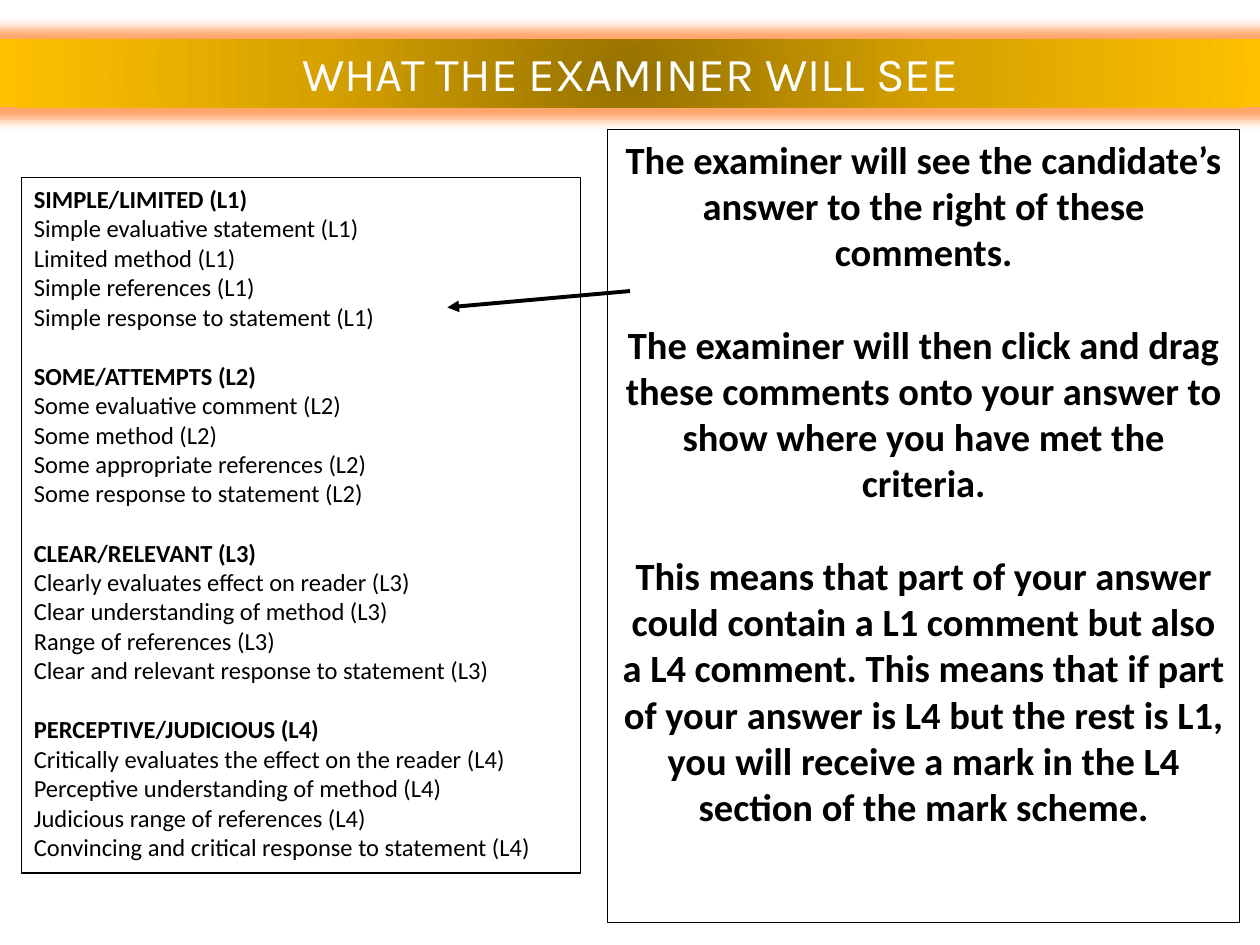
from lxml import etree
from pptx import Presentation
from pptx import util as u
from pptx.dml.color import RGBColor
from pptx.enum import shapes, text
from pptx.oxml import parse_xml
from pptx.oxml.ns import nsdecls, qn

BLACK, WHITE, GLOW = "000000", "FFFFFF", "FF6600"
BAR_STOPS = [(0, "977200"), (50, "D7A200"), (100, "FFC000")]

LEVELS = {
    "SIMPLE/LIMITED (L1)": [
        "Simple evaluative statement (L1)",
        "Limited method (L1)",
        "Simple references (L1)",
        "Simple response to statement (L1)",
    ],
    "SOME/ATTEMPTS (L2)": [
        "Some evaluative comment (L2)",
        "Some method (L2)",
        "Some appropriate references (L2)",
        "Some response to statement (L2)",
    ],
    "CLEAR/RELEVANT (L3)": [
        "Clearly evaluates effect on reader (L3)",
        "Clear understanding of method (L3)",
        "Range of references (L3)",
        "Clear and relevant response to statement (L3)",
    ],
    "PERCEPTIVE/JUDICIOUS (L4)": [
        "Critically evaluates the effect on the reader (L4)",
        "Perceptive understanding of method (L4)",
        "Judicious range of references (L4)",
        "Convincing and critical response to statement (L4)",
    ],
}
EXPLANATION = [
    "The examiner will see the candidate’s answer to the right of these comments.",
    "The examiner will then click and drag these comments onto your answer to "
    "show where you have met the criteria.",
    "This means that part of your answer could contain a L1 comment but also "
    "a L4 comment. This means that if part of your answer is L4 but the rest "
    "is L1, you will receive a mark in the L4 section of the mark scheme.",
]


def color(value):
    return RGBColor.from_string(value)


def write(paragraph, content, size, font="Calibri", fill=BLACK, bold=False,
          align=text.PP_ALIGN.LEFT, before=0):
    paragraph.alignment = align
    paragraph.space_before = u.Pt(before)
    run = paragraph.add_run()
    run.text = content
    run.font.size = u.Pt(size)
    run.font.name = font
    run.font.bold = bold
    run.font.color.rgb = color(fill)


class SlideBuilder:
    line_color = BLACK

    def __init__(self, slide):
        self.slide = slide

    def place(self, shape, left, top, width, height):
        shape.left, shape.top = u.Inches(left), u.Inches(top)
        shape.width, shape.height = u.Inches(width), u.Inches(height)

    def title_bar(self, content, *box):
        title = self.slide.shapes.title
        self.place(title, *box)
        # Radial gradient and soft glow
        stops = "".join(
            f'<a:gs pos="{position * 1000}"><a:srgbClr val="{value}"/></a:gs>'
            for position, value in BAR_STOPS)
        properties = title._element.spPr
        properties.append(parse_xml(
            f'<a:gradFill {nsdecls("a")}><a:gsLst>{stops}</a:gsLst>'
            '<a:path path="circle"><a:fillToRect l="50000" t="50000" '
            'r="50000" b="50000"/></a:path></a:gradFill>'))
        properties.append(parse_xml(
            f'<a:effectLst {nsdecls("a")}><a:glow rad="{u.Pt(14)}">'
            f'<a:srgbClr val="{GLOW}"><a:alpha val="60000"/></a:srgbClr>'
            '</a:glow></a:effectLst>'))
        frame = title.text_frame
        frame.auto_size = text.MSO_AUTO_SIZE.NONE
        frame.vertical_anchor = text.MSO_ANCHOR.MIDDLE
        write(frame.paragraphs[0], content, 27, font="Karla", fill=WHITE,
              align=text.PP_ALIGN.CENTER)
        # Bring the bar in front of the boxes
        self.slide.shapes._spTree.append(title._element)

    def text_box(self, paragraphs, *box):
        """Each paragraph is its text and its format."""
        shape = self.slide.shapes.add_textbox(0, 0, 0, 0)
        self.place(shape, *box)
        shape.line.color.rgb = color(self.line_color)
        shape.line.width = u.Pt(0.75)
        frame = shape.text_frame
        frame.word_wrap = True
        for index, (content, style) in enumerate(paragraphs):
            paragraph = frame.add_paragraph() if index else frame.paragraphs[0]
            write(paragraph, content, **style)

    def arrow(self, *ends):
        connector = self.slide.shapes.add_connector(
            shapes.MSO_CONNECTOR.STRAIGHT, *map(u.Inches, ends))
        connector.line.color.rgb = color(self.line_color)
        connector.line.width = u.Pt(2.25)
        properties = connector._element.spPr
        etree.SubElement(properties.find(qn("a:ln")), qn("a:tailEnd"),
                         type="triangle")
        etree.SubElement(properties, qn("a:effectLst"))


def main():
    presentation = Presentation()
    presentation.slide_width = u.Inches(10)
    presentation.slide_height = u.Inches(7.5)
    builder = SlideBuilder(
        presentation.slides.add_slide(presentation.slide_layouts[5]))

    # Examiner comments, grouped by level
    comments = []
    for heading, points in LEVELS.items():
        comments.append((heading, dict(size=14, bold=True,
                                       before=17 if comments else 0)))
        comments += [(point, dict(size=14)) for point in points]
    builder.text_box(comments, 0.17, 1.41, 4.44, 5.52)

    # Explanation and its arrow to the comments
    explanation = [
        (content, dict(size=22, bold=True, align=text.PP_ALIGN.CENTER,
                       before=26.5 if index else 0))
        for index, content in enumerate(EXPLANATION)]
    builder.text_box(explanation, 4.82, 1.03, 5.02, 6.29)
    builder.arrow(5, 2.31, 3.55, 2.44)

    # Title
    builder.title_bar("WHAT THE EXAMINER WILL SEE", 0, 0.31, 10, 0.54)

    presentation.save("out.pptx")


if __name__ == "__main__":
    main()
